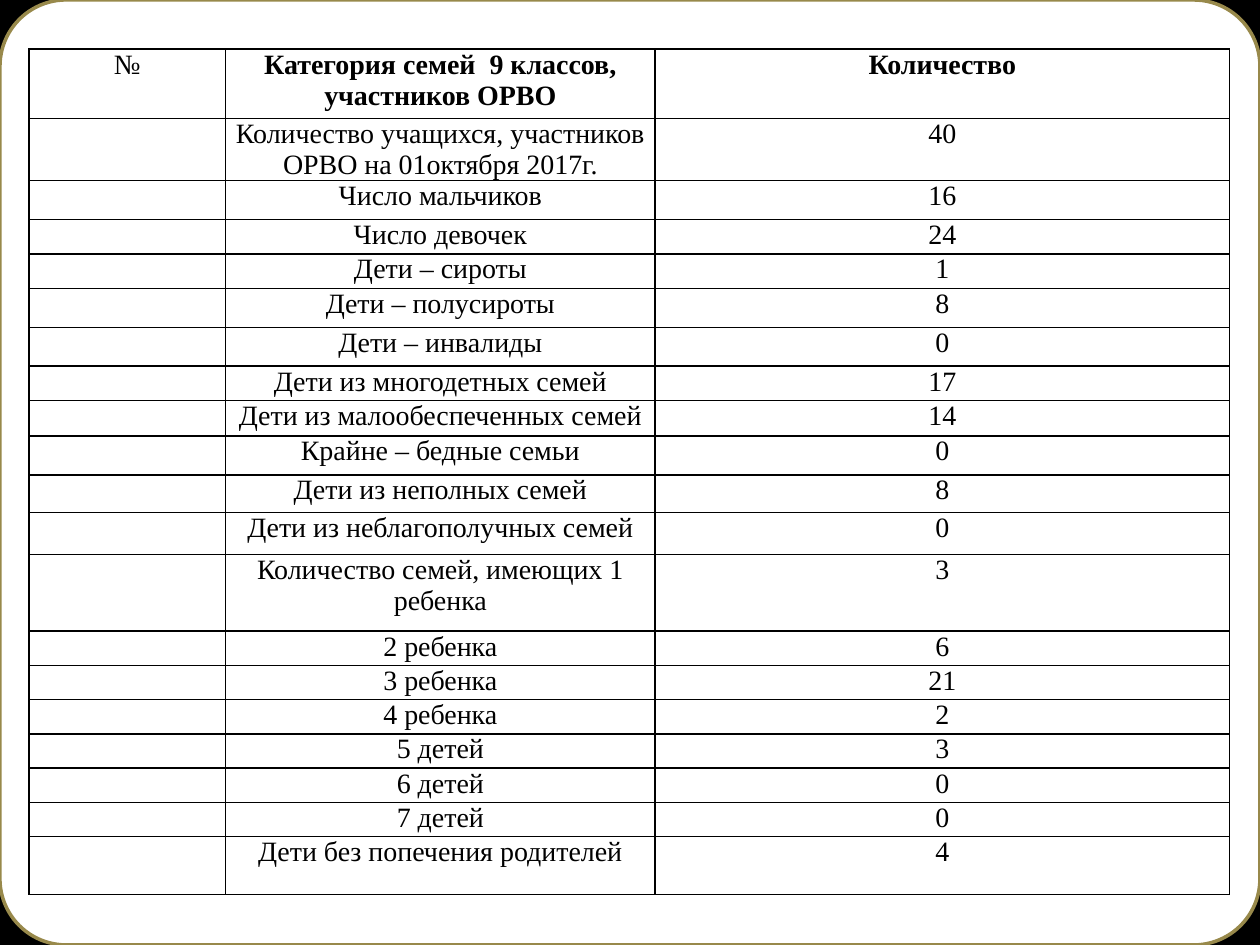
from lxml.etree import SubElement
from pptx import Presentation
from pptx.dml.color import RGBColor as Color
from pptx.enum.shapes import MSO_SHAPE as Shape
from pptx.enum.text import PP_ALIGN as Align
from pptx.oxml.ns import qn
from pptx.util import Pt

HEADER = ("№", "Категория семей  9 классов, участников ОРВО", "Количество")
FAMILIES = [
    ("Количество учащихся, участников ОРВО на 01октября 2017г.", 40, 35.3),
    ("Число мальчиков", 16, 22.3),
    ("Число девочек", 24, 18),
    ("Дети – сироты", 1, 18),
    ("Дети – полусироты", 8, 22.3),
    ("Дети – инвалиды", 0, 22.3),
    ("Дети из многодетных семей", 17, 19.4),
    ("Дети из малообеспеченных семей", 14, 20.2),
    ("Крайне – бедные семьи", 0, 22.3),
    ("Дети из неполных семей", 8, 21.6),
    ("Дети из неблагополучных семей", 0, 23.8),
    ("Количество семей, имеющих 1 ребенка", 3, 43.9),
    ("2 ребенка", 6, 18),
    ("3 ребенка", 21, 18),
    ("4 ребенка", 2, 18),
    ("5 детей", 3, 18),
    ("6 детей", 0, 18),
    ("7 детей", 0, 18),
    ("Дети без попечения родителей", 4, 33.1),
]
HEADER_HEIGHT = 39.6
COLUMN_WIDTHS = (112.3, 245.5, 328.3)
TABLE_LEFT, TABLE_TOP = 16.6, 28.1
SLIDE_WIDTH, SLIDE_HEIGHT = 720, 540

THEME = {
    "font": "Times New Roman",
    "size": 16,
    "ink": "000000",
    "background": "000000",
    "card": "FFFFFF",
    "card_line": "98894B",
    "card_line_width": 2,
    "border_width": 1,
}


def color(name):
    return Color.from_string(THEME[name])


def add_borders(cell):
    properties = cell._tc.get_or_add_tcPr()
    for position, side in enumerate(("lnL", "lnR", "lnT", "lnB")):
        line = properties.makeelement(qn(f"a:{side}"), {"w": str(Pt(THEME["border_width"]))})
        fill = SubElement(line, qn("a:solidFill"))
        SubElement(fill, qn("a:srgbClr"), val=THEME["ink"])
        properties.insert(position, line)


def fill_cell(cell, text, bold):
    cell.margin_left = cell.margin_right = cell.margin_top = cell.margin_bottom = 0
    cell.fill.background()
    add_borders(cell)
    paragraph = cell.text_frame.paragraphs[0]
    paragraph.alignment = Align.CENTER
    if not text:
        SubElement(paragraph._p, qn("a:endParaRPr"), sz=str(THEME["size"] * 100))
        return
    run = paragraph.add_run()
    run.text = text
    run.font.name = THEME["font"]
    run.font.size = Pt(THEME["size"])
    run.font.bold = bold
    run.font.color.rgb = color("ink")


def add_card(slide):
    card = slide.shapes.add_shape(
        Shape.ROUNDED_RECTANGLE, 0, 0, Pt(SLIDE_WIDTH), Pt(SLIDE_HEIGHT))
    card.adjustments[0] = 0.07
    card.shadow.inherit = False
    card.fill.solid()
    card.fill.fore_color.rgb = color("card")
    card.line.color.rgb = color("card_line")
    card.line.width = Pt(THEME["card_line_width"])


def add_family_table(slide):
    rows = [HEADER] + [("", category, str(count)) for category, count, _ in FAMILIES]
    heights = [HEADER_HEIGHT] + [height for _, _, height in FAMILIES]
    table = slide.shapes.add_table(
        len(rows), len(HEADER), Pt(TABLE_LEFT), Pt(TABLE_TOP),
        Pt(sum(COLUMN_WIDTHS)), Pt(sum(heights))).table
    table.first_row = table.horz_banding = False
    for column, width in zip(table.columns, COLUMN_WIDTHS):
        column.width = Pt(width)
    for row_index, (texts, height) in enumerate(zip(rows, heights)):
        table.rows[row_index].height = Pt(height)
        for column_index, text in enumerate(texts):
            bold = row_index == 0 and column_index > 0
            fill_cell(table.cell(row_index, column_index), text, bold)


def main():
    presentation = Presentation()
    presentation.slide_width = Pt(SLIDE_WIDTH)
    presentation.slide_height = Pt(SLIDE_HEIGHT)
    slide = presentation.slides.add_slide(presentation.slide_layouts[6])
    slide.background.fill.solid()
    slide.background.fill.fore_color.rgb = color("background")
    add_card(slide)
    add_family_table(slide)
    presentation.save("out.pptx")


if __name__ == "__main__":
    main()
